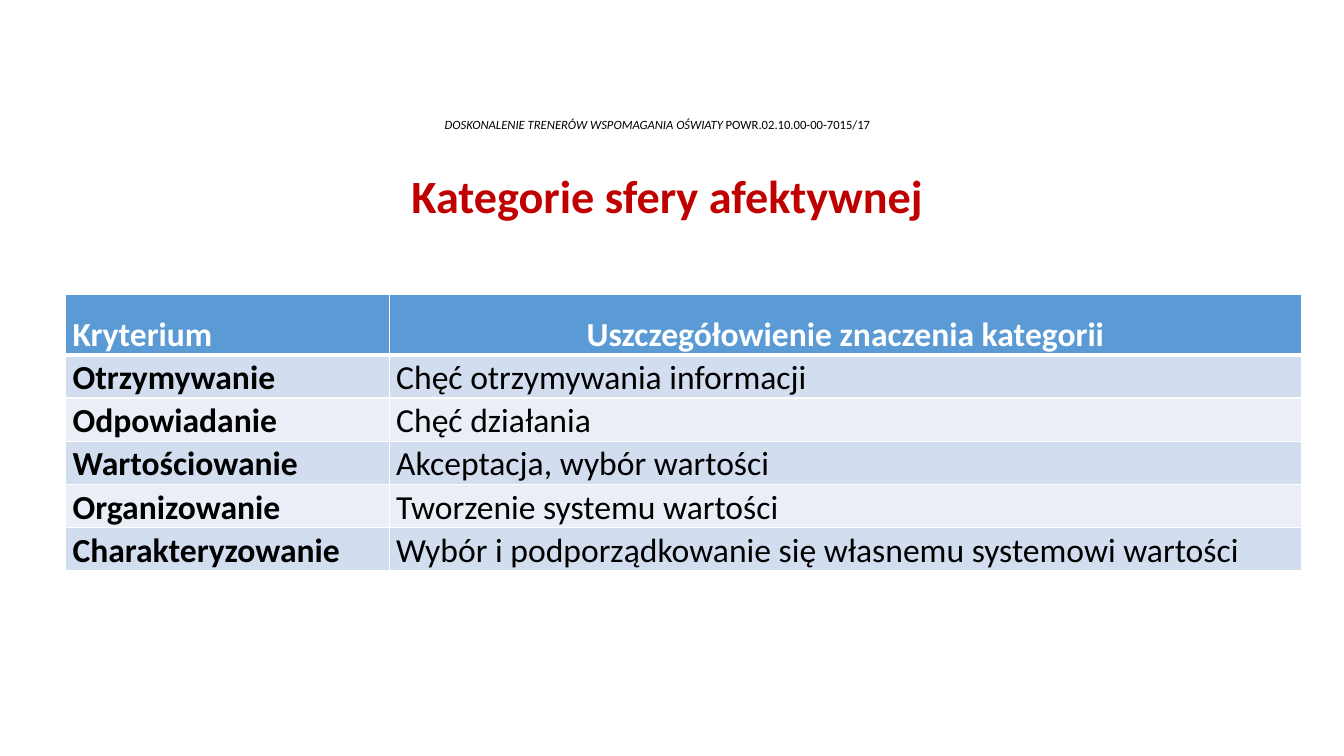
from pptx import Presentation
from pptx.dml.color import RGBColor
from pptx.enum.text import MSO_ANCHOR as ANCHOR, MSO_AUTO_SIZE as AUTO, PP_ALIGN as ALIGN
from pptx.oxml.ns import qn
from pptx.util import Inches, Pt
from lxml.etree import SubElement

FONT = "Calibri"
BLACK, WHITE, RED = "000000", "FFFFFF", "C00000"
HEADER_FILL, BANDS = "5B9BD5", ("D2DEEF", "EAEFF7")
ROWS = [
    ("Kryterium", "Uszczegółowienie znaczenia kategorii"),
    ("Otrzymywanie", "Chęć otrzymywania informacji"),
    ("Odpowiadanie", "Chęć działania"),
    ("Wartościowanie", "Akceptacja, wybór wartości"),
    ("Organizowanie", "Tworzenie systemu wartości"),
    ("Charakteryzowanie", "Wybór i podporządkowanie się własnemu systemowi wartości"),
]
COL_WIDTHS = (3.21, 9.05)
ROW_HEIGHT = 0.41


def rgb(value):
    return RGBColor.from_string(value)


def set_attrs(target, values):
    for name, value in values.items():
        setattr(target, name, value)


def write(tf, runs, size, color, align=ALIGN.LEFT, spacing=0.9):
    """Fill the first paragraph with (text, font values) runs."""
    p = tf.paragraphs[0]
    set_attrs(p, {"alignment": align, "line_spacing": spacing})
    for text, values in runs:
        r = p.add_run()
        r.text = text
        set_attrs(r.font, {"name": FONT, "size": Pt(size), **values})
        r.font.color.rgb = rgb(color)


def set_borders(cell, top, bottom):
    tc_pr = cell._tc.get_or_add_tcPr()
    for side, width in (("L", 1), ("R", 1), ("T", top), ("B", bottom)):
        ln = SubElement(tc_pr, qn(f"a:ln{side}"), w=str(Pt(width)))
        fill = SubElement(ln, qn("a:solidFill"))
        SubElement(fill, qn("a:srgbClr"), val=WHITE)


def add_project_line(s):
    box = s.shapes.add_textbox(Inches(0.79), Inches(0.46), Inches(11.46), Inches(1.22))
    tf = box.text_frame
    set_attrs(tf, {"word_wrap": True, "vertical_anchor": ANCHOR.BOTTOM,
                   "margin_bottom": Inches(0.37)})
    write(tf, [("DOSKONALENIE TRENERÓW WSPOMAGANIA OŚWIATY ", {"italic": True}),
               ("POWR.02.10.00-00-7015/17", {"italic": False})],
          9, BLACK, ALIGN.CENTER)


def add_title(s, text):
    title = s.shapes.title
    set_attrs(title, {"left": Inches(0.92), "top": Inches(1.46),
                      "width": Inches(11.5), "height": Inches(1.01)})
    tf = title.text_frame
    set_attrs(tf, {"auto_size": AUTO.NONE, "word_wrap": True,
                   "vertical_anchor": ANCHOR.MIDDLE})
    write(tf, [(text, {"bold": True})], 33, RED, ALIGN.CENTER)


def format_cell(cell, text, row, col):
    header = row == 0
    set_attrs(cell, {"margin_left": Inches(0.07), "margin_right": Inches(0.07),
                     "margin_top": 0, "margin_bottom": 0})
    set_borders(cell, top=3 if row == 1 else 1, bottom=3 if header else 1)
    cell.fill.solid()
    cell.fill.fore_color.rgb = rgb(HEADER_FILL if header else BANDS[(row - 1) % 2])
    write(cell.text_frame, [(text, {"bold": header or col == 0})], 24,
          WHITE if header else BLACK,
          ALIGN.CENTER if header and col == 1 else ALIGN.LEFT,
          1.5 if header else 1.07)


def add_category_table(s):
    table = s.shapes.add_table(
        len(ROWS), len(COL_WIDTHS), Inches(0.65), Inches(2.92),
        Inches(sum(COL_WIDTHS)), Inches(ROW_HEIGHT * len(ROWS))).table
    for column, width in zip(table.columns, COL_WIDTHS):
        column.width = Inches(width)
    for row, texts in enumerate(ROWS):
        for col, text in enumerate(texts):
            format_cell(table.cell(row, col), text, row, col)


def main():
    prs = Presentation()
    set_attrs(prs, {"slide_width": Inches(13.33), "slide_height": Inches(7.5)})
    s = prs.slides.add_slide(prs.slide_layouts[5])  # title only

    # Heading
    add_project_line(s)
    add_title(s, "Kategorie sfery afektywnej ")

    # Categories and their meaning
    add_category_table(s)

    prs.save("out.pptx")


if __name__ == "__main__":
    main()
